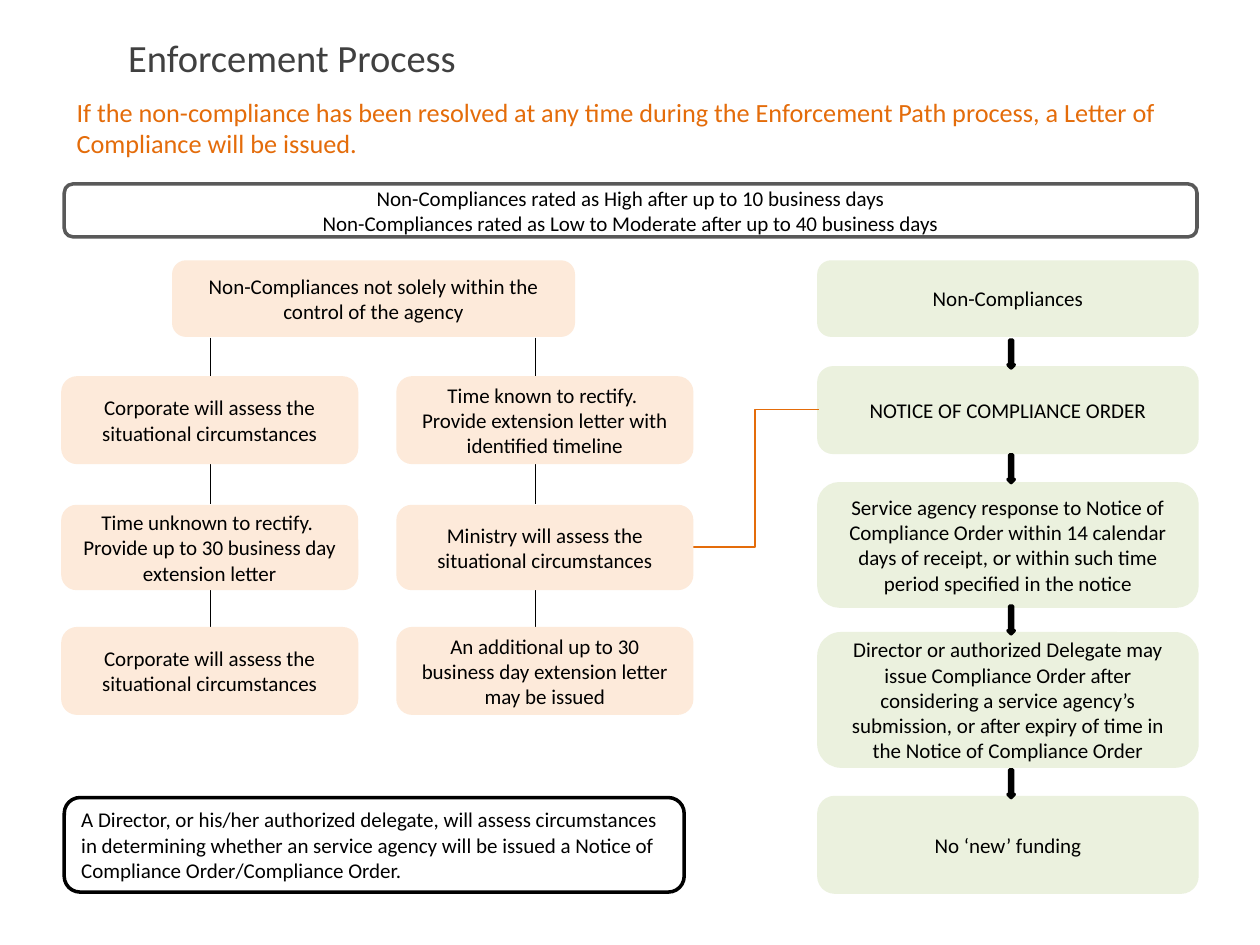
from lxml.etree import SubElement
from pptx import Presentation
from pptx.dml.color import RGBColor
from pptx.enum.shapes import MSO_CONNECTOR, MSO_SHAPE
from pptx.enum.text import MSO_ANCHOR, PP_ALIGN
from pptx.oxml.ns import qn
from pptx.util import Inches, Pt

PEACH, GREEN, ORANGE = "FDEADA", "EBF1DE", "E46C0A"
BLACK, WHITE, GREY, DARK = "000000", "FFFFFF", "595959", "404040"


def color(value):
    return RGBColor.from_string(value)


class FlowSlide:
    font = "Calibri"
    size = 12

    def __init__(self, prs):
        self.shapes = prs.slides.add_slide(prs.slide_layouts[6]).shapes

    def run(self, p, text, size=size, c=BLACK):
        r = p.add_run()
        r.text = text
        r.font.name = self.font
        r.font.size = Pt(size)
        r.font.color.rgb = color(c)

    def shape(self, kind, x, y, w, h, fill, line):
        sp = self.shapes.add_shape(kind, Inches(x), Inches(y), Inches(w), Inches(h))
        sp.shadow.inherit = False
        sp.fill.solid()
        sp.fill.fore_color.rgb = color(fill)
        sp.line.color.rgb = color(line)
        sp.line.width = Pt(2)
        return sp

    def box(self, x, y, w, h, lines, fill, line=None, align=PP_ALIGN.CENTER):
        sp = self.shape(MSO_SHAPE.ROUNDED_RECTANGLE, x, y, w, h, fill, line or fill)
        tf = sp.text_frame
        tf.word_wrap = True
        tf.vertical_anchor = MSO_ANCHOR.MIDDLE
        for i, text in enumerate(lines):
            p = tf.add_paragraph() if i else tf.paragraphs[0]
            p.alignment = align
            self.run(p, text)

    def arrow(self, x, y, w, h):
        self.shape(MSO_SHAPE.DOWN_ARROW, x, y, w, h, BLACK, BLACK)

    def connector(self, x1, y1, x2, y2, c=BLACK, width=0.75, kind=MSO_CONNECTOR.STRAIGHT):
        cn = self.shapes.add_connector(kind, Inches(x1), Inches(y1), Inches(x2), Inches(y2))
        cn.line.color.rgb = color(c)
        cn.line.width = Pt(width)
        SubElement(cn._element.spPr, qn("a:effectLst"))

    def heading(self, x, y, w, h, title, note):
        tf = self.shapes.add_textbox(Inches(x), Inches(y), Inches(w), Inches(h)).text_frame
        tf.word_wrap = True
        p = tf.paragraphs[0]
        p._p.get_or_add_pPr().set("marL", str(Inches(0.41)))
        self.run(p, title, 22, DARK)
        p = tf.add_paragraph()
        p.space_before = Pt(9)
        self.run(p, note, 15, ORANGE)


def main():
    prs = Presentation()
    prs.slide_width, prs.slide_height = Inches(10), Inches(7.5)
    s = FlowSlide(prs)

    # Heading and time limits
    s.heading(0.51, 0.22, 9, 1.12, "Enforcement Process",
              "If the non-compliance has been resolved at any time during the "
              "Enforcement Path process, a Letter of Compliance will be issued.")
    s.box(0.51, 1.46, 8.99, 0.42,
          ["Non-Compliances rated as High after up to 10 business days",
           "Non-Compliances rated as Low to Moderate after up to 40 business days"],
          WHITE, GREY)

    # Compliance order path
    for y, h, text in [
        (2.08, 0.58, "Non-Compliances"),
        (2.92, 0.67, "NOTICE OF COMPLIANCE ORDER"),
        (3.84, 0.97, "Service agency response to Notice of Compliance Order within 14 "
                     "calendar days of receipt, or within such time period specified in "
                     "the notice"),
        (5.03, 1.05, "Director or authorized Delegate may issue Compliance Order after "
                     "considering a service agency’s submission, or after expiry of time "
                     "in the Notice of Compliance Order"),
        (6.33, 0.75, "No ‘new’ funding"),
    ]:
        s.box(6.5, y, 3, h, [text], GREEN)
    s.connector(5.49, 4.34, 6.5, 3.25, ORANGE, 1, MSO_CONNECTOR.ELBOW)
    for y in (2.7, 3.61, 4.81, 6.11):
        s.arrow(8, y, 0.05, 0.22)

    # Extension path: one shared start, then two columns
    s.box(1.38, 2.08, 3.17, 0.58,
          ["Non-Compliances not solely within the control of the agency"], PEACH)
    assess = "Corporate will assess the situational circumstances"
    rows = [(3, 0.67), (4.02, 0.65), (4.99, 0.67)]
    columns = [
        (0.5, 1.67, [assess,
                     "Time unknown to rectify.  Provide up to 30 business day extension letter",
                     assess]),
        (3.16, 4.25, ["Time known to rectify.  Provide extension letter with identified timeline",
                      "Ministry will assess the situational circumstances",
                      "An additional up to 30 business day extension letter may be issued"]),
    ]
    for x, line_x, texts in columns:
        for y in (2.68, 3.67, 4.67):
            s.connector(line_x, y, line_x, y + 0.33)
        for (y, h), text in zip(rows, texts):
            s.box(x, y, 2.33, h, [text], PEACH)

    # Director's note
    s.box(0.51, 6.33, 4.92, 0.75,
          ["A Director, or his/her authorized delegate, will assess circumstances in "
           "determining whether an service agency will be issued a Notice of Compliance "
           "Order/Compliance Order."], WHITE, BLACK, PP_ALIGN.LEFT)

    prs.save("out.pptx")


if __name__ == "__main__":
    main()
